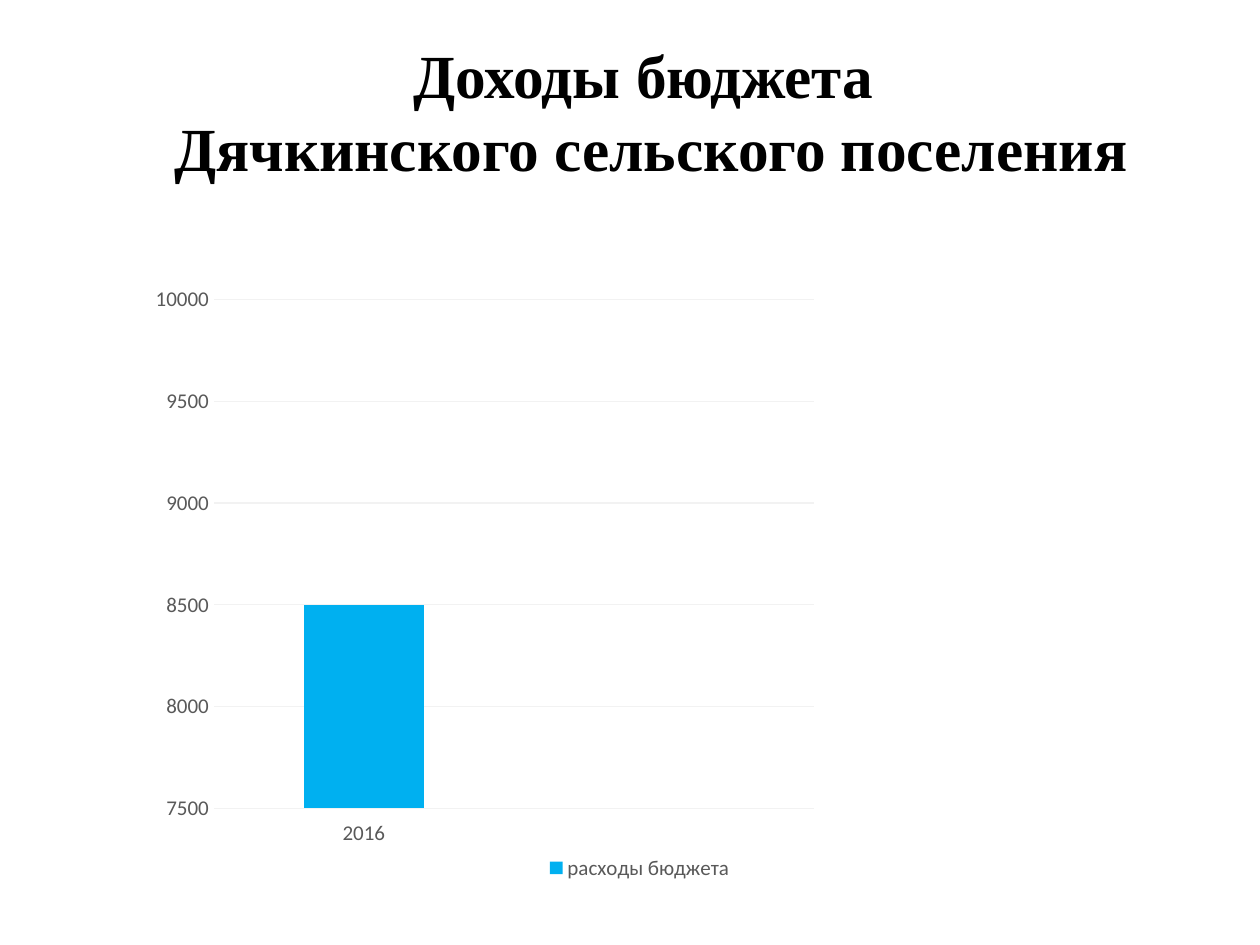
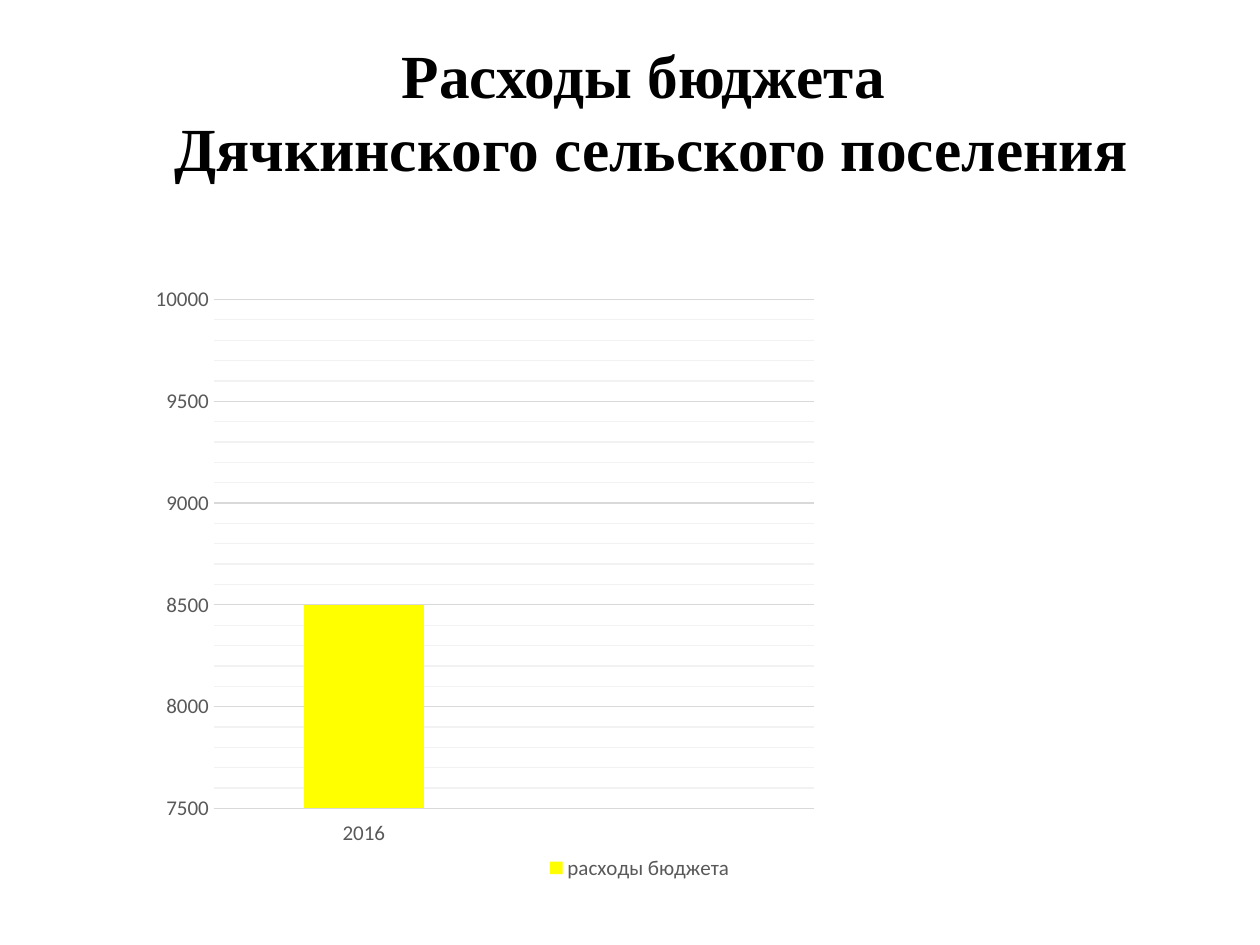
import pptx
import pptx.chart.data
import pptx.dml.color
import pptx.enum.chart
import pptx.enum.text
import pptx.oxml
import pptx.oxml.ns
import pptx.util
from pptx.util import Cm

COLORS = {
    "title": "000000",
    "label": "595959",
    "light_grid": "F2F2F2",
    "dark_grid": "D9D9D9",
    "income": "00B0F0",
    "expense": "FFFF00",
}
SETTLEMENT = "Дячкинского сельского поселения"


class BudgetDeck:
    """Holds the shared style and the current page."""

    title_font = "Times New Roman"
    chart_font = "Calibri"
    grid_width = pptx.util.Pt(0.75)
    plot_area = {"x": 0.119, "y": 0.039, "w": 0.537, "h": 0.835}

    def __init__(self):
        self.deck = pptx.Presentation()
        self.deck.slide_width = Cm(25.4)
        self.deck.slide_height = Cm(19.05)
        self.page = None

    def color(self, name):
        return pptx.dml.color.RGBColor.from_string(COLORS[name])

    def style_font(self, font, name, size, color, bold=False):
        font.name = name
        font.size = pptx.util.Pt(size)
        font.bold = bold
        font.color.rgb = self.color(color)

    def add_page(self):
        self.page = self.deck.slides.add_slide(self.deck.slide_layouts[6])

    def add_title(self, lines):
        box = self.page.shapes.add_textbox(Cm(1.7), Cm(0.64), Cm(22.86), Cm(3.18))
        frame = box.text_frame
        frame.word_wrap = True
        frame.vertical_anchor = pptx.enum.text.MSO_ANCHOR.MIDDLE
        frame.text = "\n".join(lines)
        for para in frame.paragraphs:
            para.alignment = pptx.enum.text.PP_ALIGN.CENTER
            for span in para.runs:
                self.style_font(span.font, self.title_font, 35, "title", bold=True)

    def add_budget_chart(self, bar_color, grid_color, minor_grid_color=None):
        data = pptx.chart.data.CategoryChartData()
        data.categories = ["2016", ""]
        data.add_series("расходы бюджета", [8500, None])
        chart = self.page.shapes.add_chart(
            pptx.enum.chart.XL_CHART_TYPE.COLUMN_CLUSTERED,
            Cm(1.63), Cm(5.56), Cm(22.53), Cm(12.29), data,
        ).chart
        chart.has_title = False
        self.style_font(chart.font, self.chart_font, 10, "title")

        # Columns
        plot = chart.plots[0]
        plot.gap_width = 150
        plot.vary_by_categories = False
        fill = plot.series[0].format.fill
        fill.solid()
        fill.fore_color.rgb = self.color(bar_color)

        # Axes and gridlines
        for axis in (chart.category_axis, chart.value_axis):
            axis.major_tick_mark = pptx.enum.chart.XL_TICK_MARK.NONE
            axis.minor_tick_mark = pptx.enum.chart.XL_TICK_MARK.NONE
            axis.format.line.fill.background()
            self.style_font(axis.tick_labels.font, self.chart_font, 12, "label")
        chart.category_axis.tick_label_position = pptx.enum.chart.XL_TICK_LABEL_POSITION.LOW
        values = chart.value_axis
        values.minimum_scale, values.maximum_scale = 7500, 10000
        values.major_unit, values.minor_unit = 500, 100
        grid_line = values.major_gridlines.format.line
        grid_line.color.rgb = self.color(grid_color)
        grid_line.width = self.grid_width
        if minor_grid_color:
            values.has_minor_gridlines = True
            self.style_minor_grid(chart, minor_grid_color)

        # Legend
        chart.has_legend = True
        chart.legend.position = pptx.enum.chart.XL_LEGEND_POSITION.BOTTOM
        chart.legend.include_in_layout = False
        self.style_font(chart.legend.font, self.chart_font, 12, "label")
        self.place_plot(chart)

    def find_part(self, chart, tag):
        return chart.element.find(".//" + pptx.oxml.ns.qn(tag))

    def style_minor_grid(self, chart, color):
        self.find_part(chart, "c:minorGridlines").append(pptx.oxml.parse_xml(
            f'<c:spPr {pptx.oxml.ns.nsdecls("c", "a")}><a:ln w="{self.grid_width}">'
            f'<a:solidFill><a:srgbClr val="{COLORS[color]}"/></a:solidFill>'
            "</a:ln></c:spPr>"
        ))

    def place_plot(self, chart):
        """Fix the inner plot area, as fractions of the chart."""
        area = self.find_part(chart, "c:plotArea")
        for old in area.findall(pptx.oxml.ns.qn("c:layout")):
            area.remove(old)
        modes = '<c:xMode val="edge"/><c:yMode val="edge"/>'
        sizes = "".join(f'<c:{key} val="{part}"/>' for key, part in self.plot_area.items())
        area.insert(0, pptx.oxml.parse_xml(
            f'<c:layout {pptx.oxml.ns.nsdecls("c")}><c:manualLayout>'
            f'<c:layoutTarget val="inner"/>{modes}{sizes}'
            "</c:manualLayout></c:layout>"
        ))


def main():
    budget = BudgetDeck()

    # Income
    budget.add_page()
    budget.add_title(["Доходы бюджета ", SETTLEMENT])
    budget.add_budget_chart("income", "light_grid")

    # Expenses
    budget.add_page()
    budget.add_title(["Расходы бюджета ", SETTLEMENT])
    budget.add_budget_chart("expense", "dark_grid", "light_grid")

    budget.deck.save("out.pptx")


if __name__ == "__main__":
    main()
